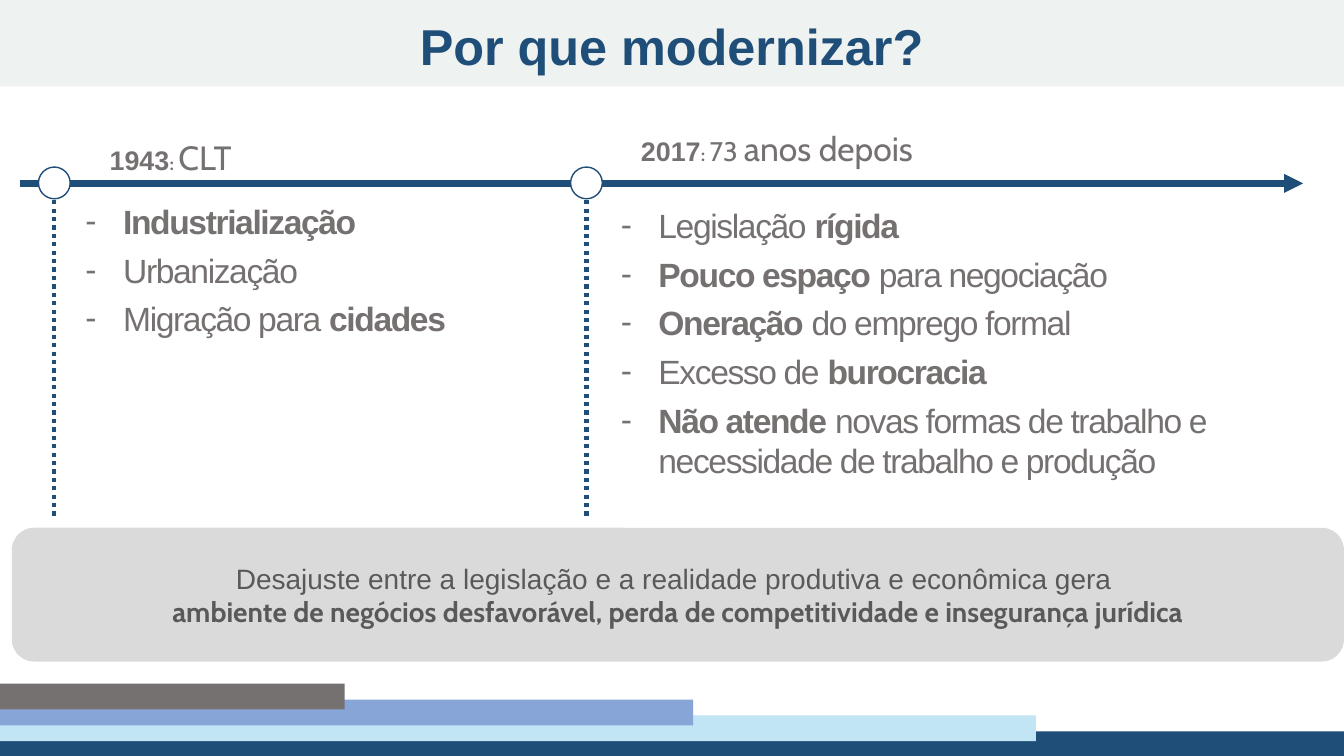
import pptx
import pptx.dml.color
import pptx.enum.dml
import pptx.enum.shapes
import pptx.enum.text
import pptx.oxml.ns
import pptx.oxml.xmlchemy
import pptx.util
from pptx.util import Cm

NAVY = pptx.dml.color.RGBColor(0x1F, 0x4E, 0x79)
SKY = pptx.dml.color.RGBColor(0xC2, 0xE5, 0xF6)
PERIWINKLE = pptx.dml.color.RGBColor(0x87, 0xA5, 0xD7)
GRAY = pptx.dml.color.RGBColor(0x76, 0x71, 0x71)
DARK_GRAY = pptx.dml.color.RGBColor(0x59, 0x59, 0x59)
MIST = pptx.dml.color.RGBColor(0xEE, 0xF2, 0xF0)
WHITE = pptx.dml.color.RGBColor(0xFF, 0xFF, 0xFF)

SHAPE = pptx.enum.shapes.MSO_SHAPE
ALIGN = pptx.enum.text.PP_ALIGN
ANCHOR = pptx.enum.text.MSO_ANCHOR
PAGE_WIDTH, PAGE_HEIGHT = 33.87, 19.05
AXIS_TOP = 4.62


def add_element(parent, tag, **attributes):
    element = pptx.oxml.xmlchemy.OxmlElement(tag)
    for name, value in attributes.items():
        element.set(name, value)
    parent.append(element)
    return element


def place(item, left, top, width, height):
    item.left, item.top = Cm(left), Cm(top)
    item.width, item.height = Cm(width), Cm(height)


def add_span(para, text, size, color, font="Arial", bold=False, small_caps=False, spacing=0):
    span = para.add_run()
    span.text = text
    span.font.name = font
    span.font.size = pptx.util.Pt(size)
    span.font.bold = bold
    span.font.color.rgb = color
    properties = span._r.get_or_add_rPr()
    if small_caps:
        properties.set("cap", "small")
    if spacing:
        properties.set("spc", str(spacing))


def add_block(page, kind, left, top, width, height, fill, outline=None):
    block = page.shapes.add_shape(kind, Cm(left), Cm(top), Cm(width), Cm(height))
    block.shadow.inherit = False
    block.fill.solid()
    block.fill.fore_color.rgb = fill
    if outline is None:
        block.line.fill.background()
    else:
        block.line.color.rgb = outline
        block.line.width = pptx.util.Pt(1)
    return block


def add_line(page, start, end, width):
    line = page.shapes.add_connector(
        pptx.enum.shapes.MSO_CONNECTOR.STRAIGHT, *(Cm(value) for value in start + end))
    line.line.color.rgb = NAVY
    line.line.width = pptx.util.Pt(width)
    add_element(line._element.spPr, "a:effectLst")
    return line


def add_date_label(page, left, top, width, spans):
    box = page.shapes.add_textbox(Cm(left), Cm(top), Cm(width), Cm(1.28))
    box.text_frame.word_wrap = False
    para = box.text_frame.paragraphs[0]
    para.alignment = ALIGN.CENTER
    para.space_after = pptx.util.Pt(6)
    for text, size, font, bold, small_caps in spans:
        add_span(para, text, size, GRAY, font, bold, small_caps)


def fill_title(page, text):
    title = page.shapes.title
    place(title, 1.4, 0.25, 31.06, 1.8)
    title.text_frame.vertical_anchor = ANCHOR.MIDDLE
    para = title.text_frame.paragraphs[0]
    para.alignment = ALIGN.CENTER
    add_span(para, text, 36, NAVY, bold=True)
    page.shapes._spTree.append(title._element)


def fill_list(page, index, bounds, items):
    body = page.placeholders[index]
    place(body, *bounds)
    frame = body.text_frame
    frame.auto_size = pptx.enum.text.MSO_AUTO_SIZE.NONE
    for number, spans in enumerate(items):
        para = frame.add_paragraph() if number else frame.paragraphs[0]
        properties = para._p.get_or_add_pPr()
        properties.set("marL", str(Cm(0.95)))
        properties.set("indent", str(-Cm(0.95)))
        add_element(properties, "a:buFont", typeface="Arial")
        add_element(properties, "a:buChar", char="-")
        para.alignment = ALIGN.LEFT
        para.line_spacing = 1.0
        para.space_before = pptx.util.Pt(0)
        para.space_after = pptx.util.Pt(6)
        for text, bold in spans:
            add_span(para, text, 24, GRAY, bold=bold, spacing=-100)
    page.shapes._spTree.append(body._element)


def add_timeline(page):
    milestones = (1.37, 14.78)
    for center in milestones:
        drop = add_line(page, (center, AXIS_TOP), (center, 13.03), 3)
        drop.line.dash_style = pptx.enum.dml.MSO_LINE.ROUND_DOT
    axis = add_line(page, (0.5, AXIS_TOP), (32.84, AXIS_TOP), 4.5)
    add_element(axis.line._get_or_add_ln(), "a:tailEnd", type="triangle")
    for center in milestones:
        add_block(page, SHAPE.OVAL, center - 0.4, AXIS_TOP - 0.41, 0.8, 0.8, WHITE, NAVY)


def add_footer_steps(page):
    steps = ((PAGE_WIDTH, NAVY), (26.11, SKY), (17.47, PERIWINKLE), (8.69, GRAY))
    for level, (width, color) in enumerate(steps):
        add_block(page, SHAPE.RECTANGLE, 0, 18.43 - 0.4 * level, width, 0.65, color)


def add_conclusion(page, lines):
    panel = add_block(page, SHAPE.ROUNDED_RECTANGLE, 0.3, 13.3, 33.57, 3.37, GRAY)
    color = panel._element.spPr.find(".//" + pptx.oxml.ns.qn("a:srgbClr"))
    add_element(color, "a:alpha", val="26000")
    frame = panel.text_frame
    frame.word_wrap = True
    frame.vertical_anchor = ANCHOR.MIDDLE
    for number, (text, font, bold) in enumerate(lines):
        para = frame.add_paragraph() if number else frame.paragraphs[0]
        para.alignment = ALIGN.CENTER
        add_span(para, text, 20, DARK_GRAY, font, bold)


def main():
    deck = pptx.Presentation()
    deck.slide_width, deck.slide_height = Cm(PAGE_WIDTH), Cm(PAGE_HEIGHT)
    page = deck.slides.add_slide(deck.slide_layouts.get_by_name("Two Content"))

    add_timeline(page)
    add_block(page, SHAPE.RECTANGLE, 0, 0, PAGE_WIDTH, 2.18, MIST)
    fill_title(page, "Por que modernizar?")
    add_footer_steps(page)

    add_date_label(page, 1.6, 3.33, 4.06, [
        ("1943", 24, "Arial", True, True),
        (": ", 16, "Calibri", True, True),
        ("CLT", 24, "Cabin", False, True),
    ])
    fill_list(page, 1, (1.9, 4.93, 13.46, 3.76), [
        [("Industrialização", True)],
        [("Urbanização", False)],
        [("Migração para ", False), ("cidades", True)],
    ])
    fill_list(page, 2, (15.39, 5.03, 18.48, 7.26), [
        [("Legislação ", False), ("rígida", True)],
        [("Pouco espaço ", True), ("para negociação", False)],
        [("Oneração", True), (" do emprego formal", False)],
        [("Excesso de ", False), ("burocracia", True)],
        [("Não atende ", True),
         ("novas formas de trabalho e necessidade de trabalho e produção", False)],
    ])
    add_date_label(page, 15.39, 3.1, 8.38, [
        ("2017", 24, "Arial", True, True),
        (": ", 16, "Calibri", True, True),
        ("73 ", 24, "Cabin", False, True),
        ("anos depois", 24, "Cabin", False, False),
    ])
    add_conclusion(page, [
        ("Desajuste entre a legislação e a realidade produtiva e econômica gera ", "Arial", False),
        ("ambiente de negócios desfavorável, perda de competitividade e insegurança jurídica",
         "Cabin", True),
    ])
    deck.save("out.pptx")


if __name__ == "__main__":
    main()
